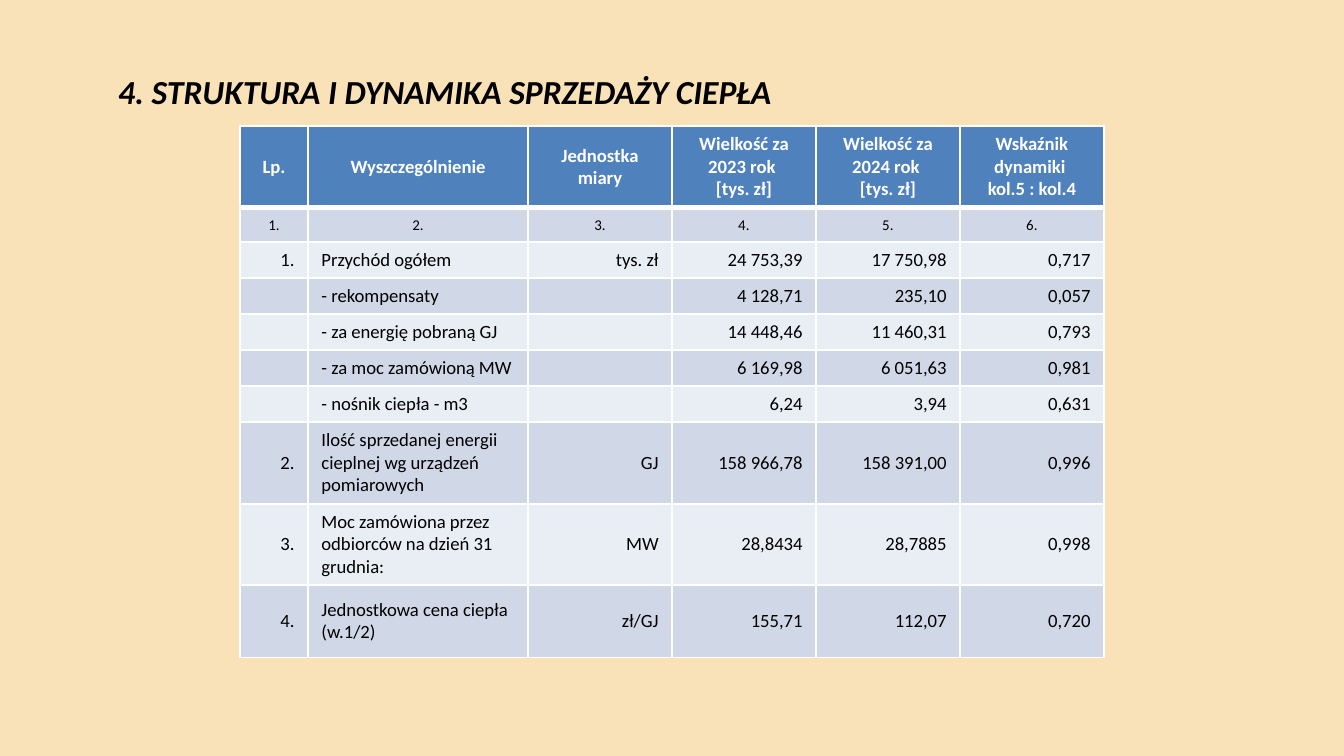
from lxml import etree
from pptx import Presentation
from pptx.dml.color import RGBColor
from pptx.enum.text import MSO_ANCHOR, PP_ALIGN
from pptx.oxml.ns import qn
from pptx.util import Emu, Pt

LEFT, CENTER, RIGHT = PP_ALIGN.LEFT, PP_ALIGN.CENTER, PP_ALIGN.RIGHT
TOP, MIDDLE = MSO_ANCHOR.TOP, MSO_ANCHOR.MIDDLE
EMU_PER_PX = 914400 / 134.4
FONT = "Calibri"
BLACK, WHITE = "000000", "FFFFFF"
CREAM, HEADER_BLUE = "FAE2B8", "4F81BD"
BANDS = ["D0D8E8", "E9EDF4"]

HEADINGS = [
    "Lp.", "Wyszczególnienie", "Jednostka miary",
    "Wielkość za 2023 rok \n[tys. zł]",
    "Wielkość za 2024 rok \n[tys. zł]",
    "Wskaźnik dynamiki \nkol.5 : kol.4",
]
NUMBERS = [f"{number}." for number in range(1, 7)]
SALES = [
    ["1.", "Przychód ogółem", "tys. zł", "24 753,39", "17 750,98", "0,717"],
    ["", "- rekompensaty", "", "4 128,71", "235,10", "0,057"],
    ["", "- za energię pobraną GJ", "", "14 448,46", "11 460,31", "0,793"],
    ["", "- za moc zamówioną MW", "", "6 169,98", "6 051,63", "0,981"],
    ["", "- nośnik ciepła - m3", "", "6,24", "3,94", "0,631"],
    ["2.", "Ilość sprzedanej energii cieplnej wg urządzeń pomiarowych",
     "GJ", "158 966,78", "158 391,00", "0,996"],
    ["3.", "Moc zamówiona przez odbiorców na dzień 31 grudnia:",
     "MW", "28,8434", "28,7885", "0,998"],
    ["4.", "Jednostkowa cena ciepła (w.1/2)", "zł/GJ", "155,71", "112,07", "0,720"],
]
COLUMN_WIDTHS = [68, 220] + [144] * 4
ROW_HEIGHTS = [82, 34] + [36] * 5 + [82, 81, 73]


def px(length):
    return Emu(round(length * EMU_PER_PX))


def color(hex_string):
    return RGBColor.from_string(hex_string)


def write(paragraph, text, size, ink, bold=False, italic=False):
    for index, line in enumerate(text.split("\n")):
        if index:
            paragraph.add_line_break()
        run = paragraph.add_run()
        run.text = line
        run.font.name = FONT
        run.font.size = Pt(size)
        run.font.bold = bold
        run.font.italic = italic
        run.font.color.rgb = color(ink)


def set_borders(cell, bottom_width, top_width):
    properties = cell._tc.get_or_add_tcPr()
    widths = {"a:lnL": 1, "a:lnR": 1, "a:lnT": top_width, "a:lnB": bottom_width}
    for position, (side, width) in enumerate(widths.items()):
        border = etree.Element(qn(side), w=str(Pt(width)))
        fill = etree.SubElement(border, qn("a:solidFill"))
        etree.SubElement(fill, qn("a:srgbClr"), val=WHITE)
        properties.insert(position, border)


def fill_cell(cell, text, fill, size, ink, align, bold):
    cell.fill.solid()
    cell.fill.fore_color.rgb = color(fill)
    cell.vertical_anchor = MIDDLE
    paragraph = cell.text_frame.paragraphs[0]
    paragraph.alignment = align
    if text:
        write(paragraph, text, size, ink, bold)
    else:
        end = etree.SubElement(paragraph._p, qn("a:endParaRPr"))
        end.set("sz", str(size * 100))


def add_heading(slide, left, top, width, height):
    heading = slide.shapes.add_textbox(px(left), px(top), px(width), px(height))
    frame = heading.text_frame
    frame.word_wrap = True
    frame.vertical_anchor = TOP
    frame.margin_top = px(8)
    write(frame.paragraphs[0], "4. STRUKTURA I DYNAMIKA SPRZEDAŻY CIEPŁA",
          18, BLACK, bold=True, italic=True)


def add_sales_table(slide, left, top, width, height):
    rows = [HEADINGS, NUMBERS] + SALES
    table = slide.shapes.add_table(
        len(rows), len(HEADINGS), px(left), px(top), px(width), px(height)
    ).table
    for column, share in zip(table.columns, COLUMN_WIDTHS):
        column.width = px(width * share / sum(COLUMN_WIDTHS))
    for row, share in zip(table.rows, ROW_HEIGHTS):
        row.height = px(height * share / sum(ROW_HEIGHTS))

    for r, texts in enumerate(rows):
        is_header = r == 0
        fill = HEADER_BLUE if is_header else BANDS[(r - 1) % 2]
        ink = WHITE if is_header else BLACK
        size = 8 if r == 1 else 10
        for c, text in enumerate(texts):
            align = CENTER if r < 2 else LEFT if c == 1 else RIGHT
            cell = table.cell(r, c)
            fill_cell(cell, text, fill, size, ink, align, is_header)
            set_borders(cell, 3 if is_header else 1, 3 if r == 1 else 1)


def main():
    deck = Presentation()
    deck.slide_width, deck.slide_height = px(1344), px(756)
    slide = deck.slides.add_slide(deck.slide_layouts[6])
    slide.background.fill.solid()
    slide.background.fill.fore_color.rgb = color(CREAM)
    add_heading(slide, 105, 63, 1142, 63)
    add_sales_table(slide, 240, 126, 864, 532)
    deck.save("out.pptx")


if __name__ == "__main__":
    main()
